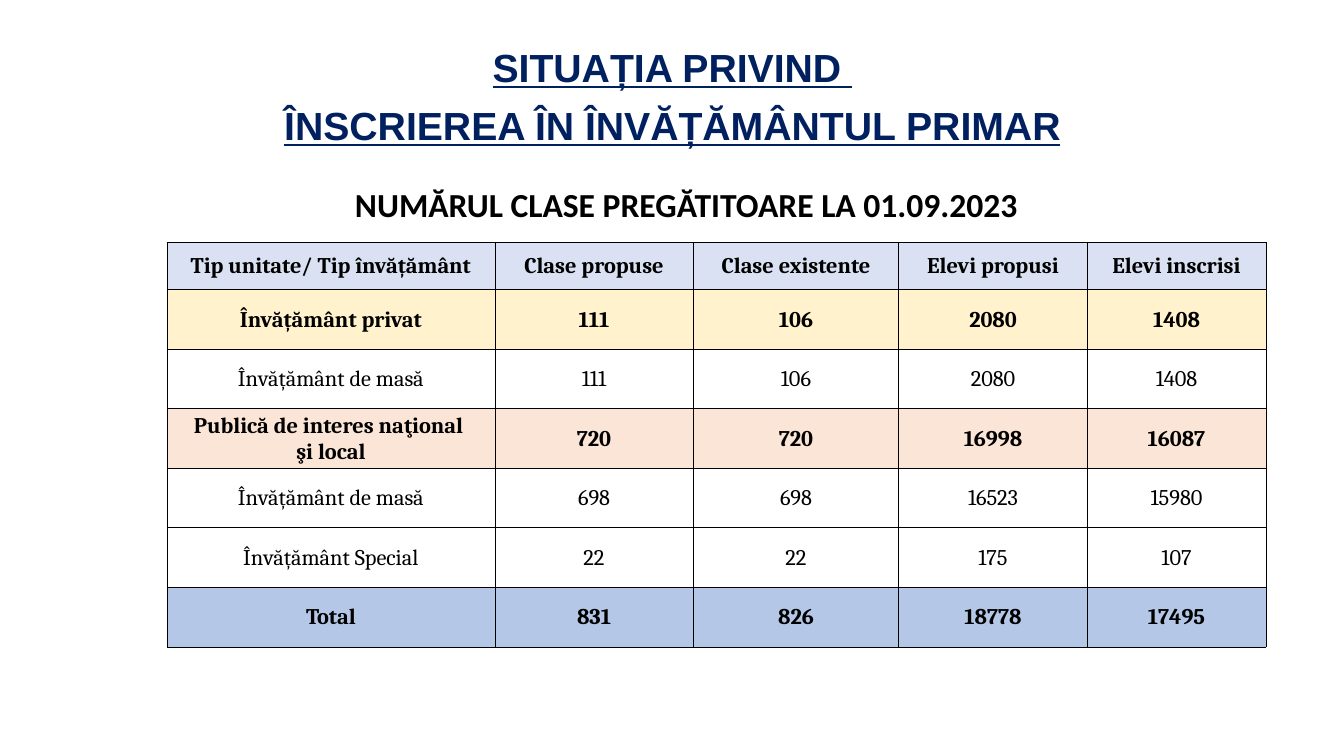
from dataclasses import dataclass
from lxml.etree import SubElement
from pptx import Presentation
from pptx.dml.color import RGBColor as RGB
from pptx.enum.text import MSO_ANCHOR as ANCHOR, MSO_AUTO_SIZE as AUTO, PP_ALIGN as ALIGN
from pptx.oxml import parse_xml
from pptx.oxml.ns import nsdecls, qn
from pptx.util import Cm, Pt


@dataclass(frozen=True)
class Theme:
    title_font: str = "Arial"
    subtitle_font: str = "Calibri"
    table_font: str = "Cambria"
    title_size: int = 28
    subtitle_size: int = 24
    table_size: int = 16
    navy: str = "002060"
    outline: str = "0070C0"
    black: str = "000000"
    header: str = "D9E1F2"
    private: str = "FFF2CC"
    public: str = "FBE5D6"
    total: str = "B4C7E7"


class Deck:
    def __init__(self, theme):
        self.theme = theme
        self.prs = Presentation()
        self.prs.slide_width, self.prs.slide_height = Cm(33.87), Cm(19.05)
        self.s = self.prs.slides.add_slide(self.prs.slide_layouts[6])

    def add_lines(self, tf, lines, font, size, color, bold=True, underline=None,
                  after=None, spacing=None, outline=None):
        for i, line in enumerate(lines):
            p = tf.add_paragraph() if i else tf.paragraphs[0]
            p.alignment = ALIGN.CENTER
            p.line_spacing = spacing
            p.space_after = after
            r = p.add_run()
            r.text = line
            f = r.font
            f.name, f.size, f.bold, f.underline = font, Pt(size), bold, underline
            f.color.rgb = RGB.from_string(color)
            if outline:
                ln = parse_xml(
                    f'<a:ln {nsdecls("a")} w="{Pt(0.75)}"><a:solidFill>'
                    f'<a:srgbClr val="{outline}"/></a:solidFill></a:ln>')
                r._r.get_or_add_rPr().insert(0, ln)

    def text(self, x, y, w, h, lines, *style, **options):
        tf = self.s.shapes.add_textbox(Cm(x), Cm(y), Cm(w), Cm(h)).text_frame
        tf.word_wrap = True
        tf.auto_size = AUTO.SHAPE_TO_FIT_TEXT
        self.add_lines(tf, lines, *style, **options)

    def borders(self, cell):
        tc_pr = cell._tc.get_or_add_tcPr()
        for side in ("a:lnL", "a:lnR", "a:lnT", "a:lnB"):
            ln = SubElement(tc_pr, qn(side), w=str(Pt(0.5)))
            fill = SubElement(ln, qn("a:solidFill"))
            SubElement(fill, qn("a:srgbClr"), val=self.theme.black)

    def table(self, x, y, widths, heights, rows):
        t = self.theme
        table = self.s.shapes.add_table(
            len(rows), len(widths), Cm(x), Cm(y), Cm(sum(widths)), Cm(sum(heights))).table
        table.first_row = table.horz_banding = False
        for col, w in zip(table.columns, widths):
            col.width = Cm(w)
        for row, h, (fill, *values) in zip(table.rows, heights, rows):
            row.height = Cm(h)
            for cell, value in zip(row.cells, values):
                cell.margin_left = cell.margin_right = cell.margin_top = Cm(0.03)
                cell.margin_bottom = 0
                cell.vertical_anchor = ANCHOR.MIDDLE
                self.borders(cell)
                if fill:
                    cell.fill.solid()
                    cell.fill.fore_color.rgb = RGB.from_string(fill)
                else:
                    cell.fill.background()
                self.add_lines(cell.text_frame, str(value).split("\n"),
                               t.table_font, t.table_size, t.black, bold=bool(fill))


def main():
    t = Theme()
    deck = Deck(t)
    deck.text(4.83, 0.97, 24.23, 3, ["SITUAȚIA PRIVIND ", "ÎNSCRIEREA ÎN ÎNVĂȚĂMÂNTUL PRIMAR"],
              t.title_font, t.title_size, t.navy, underline=True, after=Pt(8), outline=t.outline)
    deck.text(7.92, 4.45, 18.95, 1.3, ["NUMĂRUL CLASE PREGĂTITOARE LA 01.09.2023 "],
              t.subtitle_font, t.subtitle_size, t.black, after=Pt(8), spacing=1.07)
    rows = [
        (t.header, "Tip unitate/ Tip învățământ", "Clase propuse", "Clase existente",
         "Elevi propusi", "Elevi inscrisi"),
        (t.private, "Învățământ privat", 111, 106, 2080, 1408),
        (None, "Învățământ de masă", 111, 106, 2080, 1408),
        (t.public, "Publică de interes naţional \nşi local", 720, 720, 16998, 16087),
        (None, "Învățământ de masă", 698, 698, 16523, 15980),
        (None, "Învățământ Special", 22, 22, 175, 107),
        (t.total, "Total", 831, 826, 18778, 17495),
    ]
    deck.table(4.21, 6.11, [8.26, 5, 5.18, 4.75, 4.5], [1.19] + [1.5] * 6, rows)
    deck.prs.save("out.pptx")


if __name__ == "__main__":
    main()
